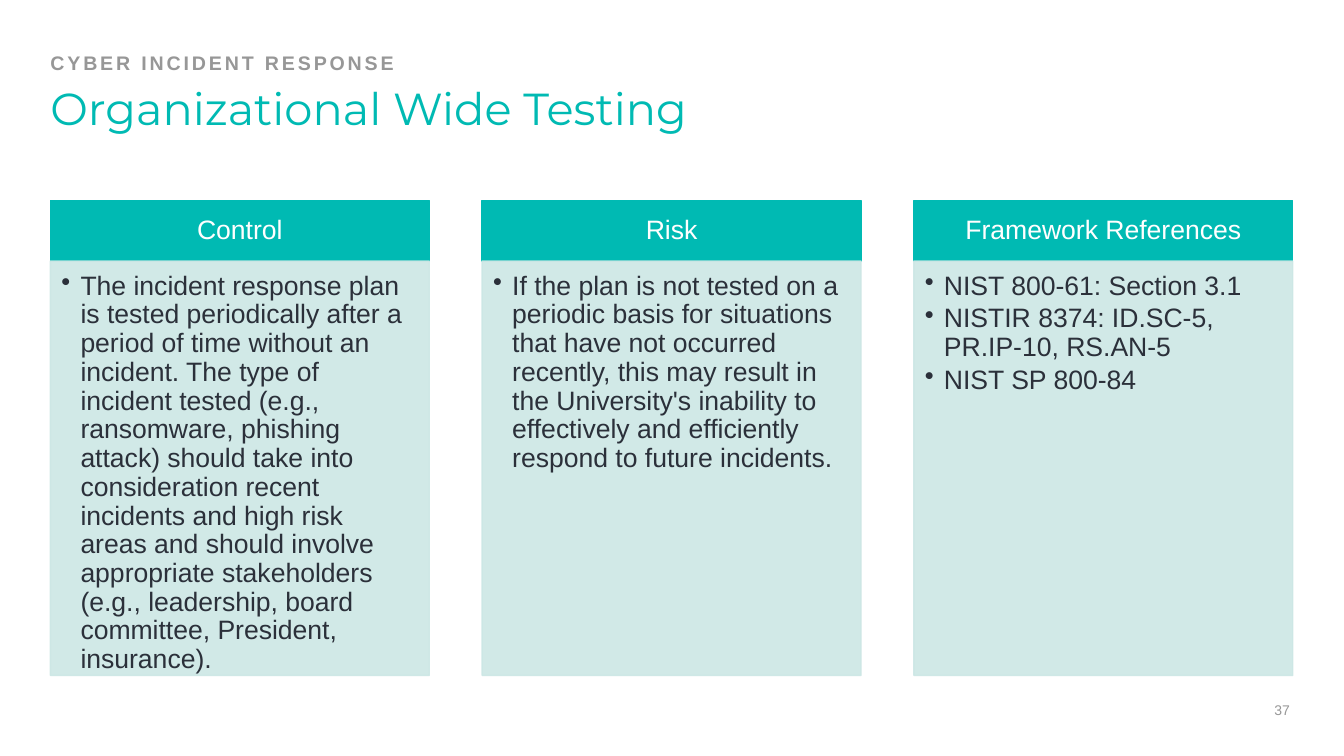
from lxml import etree
from pptx import Presentation
from pptx.dml.color import RGBColor
from pptx.enum import shapes, text
from pptx.oxml import ns
from pptx.util import Cm, Pt

COLORS = {"teal": "00BAB3", "mint": "CCE7E5", "ink": "2B303A",
          "grey": "979797", "white": "FFFFFF"}
COLUMNS = [
    ("Control", [
        "The incident response plan is tested periodically after a period of time "
        "without an incident. The type of incident tested (e.g., ransomware, phishing "
        "attack) should take into consideration recent incidents and high risk areas "
        "and should involve appropriate stakeholders (e.g., leadership, board "
        "committee, President, insurance)."]),
    ("Risk", [
        "If the plan is not tested on a periodic basis for situations that have not "
        "occurred recently, this may result in the University's inability to "
        "effectively and efficiently respond to future incidents."]),
    ("Framework References", [
        "NIST 800-61: Section 3.1",
        "NISTIR 8374: ID.SC-5, PR.IP-10, RS.AN-5",
        "NIST SP 800-84"]),
]
LEFT, TOP, WIDTH, PITCH = 1.27, 5.05, 9.55, 10.88
HEADER_HEIGHT, BODY_HEIGHT = 1.53, 10.44


def write(box, lines, size, color, anchor, align, insets, font="Arial", after=0, bullet=False):
    frame = box.text_frame
    frame.text = "\n".join(lines)
    frame.word_wrap = True
    frame.auto_size = text.MSO_AUTO_SIZE.NONE
    frame.vertical_anchor = anchor
    frame.margin_left, frame.margin_top, frame.margin_right, frame.margin_bottom = map(Cm, insets)
    for paragraph in frame.paragraphs:
        if bullet:
            props = paragraph._p.get_or_add_pPr()
            props.set("marL", str(Cm(0.48)))
            props.set("indent", str(-Cm(0.48)))
            etree.SubElement(props, ns.qn("a:buChar"), char="•")
        paragraph.alignment = align
        paragraph.line_spacing = 0.9
        paragraph.space_before = Pt(0)
        paragraph.space_after = Pt(after)
        for run in paragraph.runs:
            run.font.name = font
            run.font.size = Pt(size)
            run.font.color.rgb = RGBColor.from_string(COLORS[color])


def add_panel(left, top, height, color):
    panel = slide.shapes.add_shape(shapes.MSO_SHAPE.RECTANGLE, Cm(left), Cm(top),
                                   Cm(WIDTH), Cm(height))
    panel.shadow.inherit = False
    for fill in (panel.fill, panel.line.fill):
        fill.solid()
        fill.fore_color.rgb = RGBColor.from_string(COLORS[color])
    panel.line.width = Pt(1)
    return panel


prs = Presentation()
prs.slide_width, prs.slide_height = Cm(33.87), Cm(19.05)
slide = prs.slides.add_slide(prs.slide_layouts[5])
top_anchor, middle = text.MSO_ANCHOR.TOP, text.MSO_ANCHOR.MIDDLE
left_align, center = text.PP_ALIGN.LEFT, text.PP_ALIGN.CENTER

title = slide.shapes.title
title.left, title.top, title.width, title.height = Cm(LEFT), Cm(1.93), Cm(31.32), Cm(1.5)
write(title, ["Organizational Wide Testing"], 32, "teal", top_anchor, left_align,
      (0, 0.25, 0, 0), font="Montserrat")

for index, (heading, points) in enumerate(COLUMNS):
    left = LEFT + index * PITCH
    header = add_panel(left, TOP, HEADER_HEIGHT, "teal")
    write(header, [heading], 19, "white", middle, center, (0.38, 0.2, 0.38, 0.2))
    body = add_panel(left, TOP + HEADER_HEIGHT, BODY_HEIGHT, "mint")
    for tint in body._element.spPr.iter(ns.qn("a:srgbClr")):
        etree.SubElement(tint, ns.qn("a:alpha"), val="90000")
    write(body, points, 19, "ink", top_anchor, left_align, (0.28, 0.28, 0.38, 0.43),
          after=2.85, bullet=True)

section = slide.shapes.add_textbox(Cm(LEFT), Cm(1.35), Cm(31.32), Cm(0.53))
write(section, ["CYBER INCIDENT RESPONSE"], 14, "grey", text.MSO_ANCHOR.BOTTOM, left_align,
      (0, 0, 0, 0))
section_font = section.text_frame.paragraphs[0].runs[0].font
section_font.bold = True
section_font._element.set("spc", "200")

page_number = slide.shapes.add_textbox(Cm(31.8), Cm(17.7), Cm(1.02), Cm(0.43))
write(page_number, ["37"], 10, "grey", middle, center, (0, 0, 0, 0))

prs.save("out.pptx")
